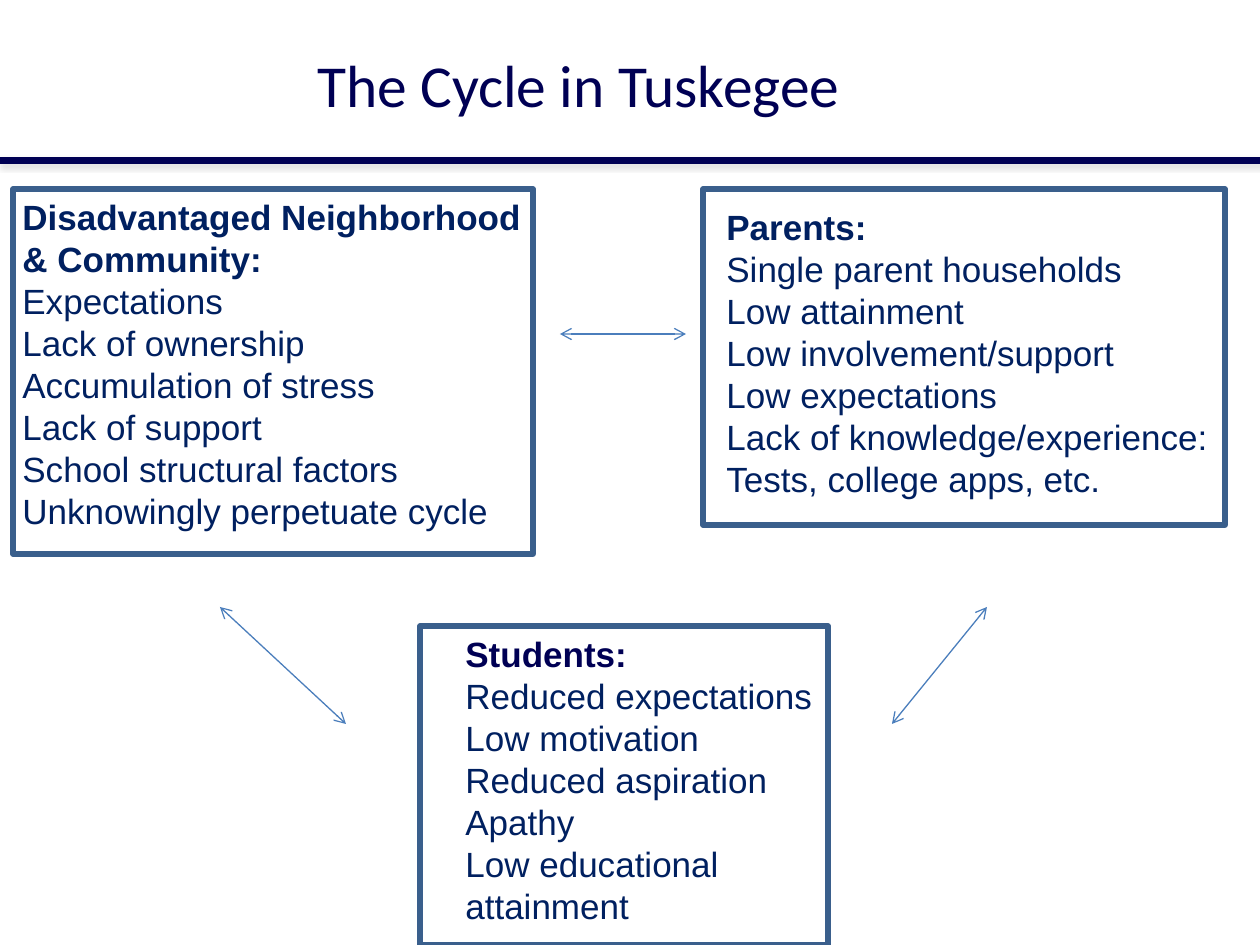
"""Build the slide showing the cycle between community, parents and students."""
from lxml.etree import SubElement
from pptx import Presentation
from pptx.dml.color import RGBColor
from pptx.enum.shapes import MSO_CONNECTOR as Connector, MSO_SHAPE as Shape
from pptx.enum.text import MSO_ANCHOR as Anchor
from pptx.oxml.ns import qn
from pptx.util import Emu, Pt

NAVY = RGBColor(0x00, 0x00, 0x54)
INK = RGBColor(0x00, 0x20, 0x60)
FRAME = RGBColor(0x3A, 0x5F, 0x8C)
ARROW = RGBColor(0x4B, 0x7E, 0xBC)
EMU_PER_PX = 914400 / 126

COMMUNITY = [
    "Disadvantaged Neighborhood", "& Community:", "Expectations",
    "Lack of ownership", "Accumulation of stress", "Lack of support",
    "School structural factors", "Unknowingly perpetuate cycle",
]
PARENTS = [
    "Parents:", "Single parent households", "Low attainment",
    "Low involvement/support", "Low expectations",
    "Lack of knowledge/experience:", "Tests, college apps, etc.",
]
STUDENTS = [
    "Students:", "Reduced expectations", "Low motivation",
    "Reduced aspiration", "Apathy", "Low educational", "attainment",
]


def px(*lengths):
    return [Emu(round(length * EMU_PER_PX)) for length in lengths]


def add_rule(page):
    rule = page.shapes.add_shape(Shape.RECTANGLE, *px(0, 157, 1270, 7))
    rule.fill.solid()
    rule.fill.fore_color.rgb = NAVY
    rule.line.fill.background()
    rule.shadow.inherit = False
    effects = rule.element.spPr.find(qn("a:effectLst"))
    shadow = SubElement(effects, qn("a:outerShdw"), blurRad=str(Pt(3.1)),
                        dist=str(Pt(1.8)), dir="5400000", rotWithShape="0")
    color = SubElement(shadow, qn("a:srgbClr"), val="808080")
    SubElement(color, qn("a:alpha"), val="35000")


def add_title(page, text):
    box = page.shapes.add_textbox(*px(305, 10, 945, 147))
    frame = box.text_frame
    frame.word_wrap = True
    frame.vertical_anchor = Anchor.MIDDLE
    frame.text = text
    font = frame.paragraphs[0].runs[0].font
    font.name, font.size, font.color.rgb = "Calibri", Pt(34), NAVY


def add_list(page, bounds, lines, heading_count=1, heading_color=INK, wrap=False):
    box = page.shapes.add_textbox(*px(*bounds))
    frame = box.text_frame
    frame.word_wrap = wrap
    frame.text = "\n".join(lines)
    for index, para in enumerate(frame.paragraphs):
        is_heading = index < heading_count
        para.line_spacing = Pt(24)
        font = para.runs[0].font
        font.name, font.size, font.bold = "Arial", Pt(20), is_heading
        font.color.rgb = heading_color if is_heading else INK


def add_frame(page, bounds):
    frame = page.shapes.add_shape(Shape.RECTANGLE, *px(*bounds))
    frame.fill.background()
    frame.line.color.rgb = FRAME
    frame.line.width = Pt(3)
    frame.shadow.inherit = False


def add_arrow(page, ends):
    arrow = page.shapes.add_connector(Connector.STRAIGHT, *px(*ends))
    arrow.line.color.rgb = ARROW
    arrow.line.width = Pt(0.75)
    outline = arrow.line._get_or_add_ln()
    for end in ("a:headEnd", "a:tailEnd"):
        SubElement(outline, qn(end), type="arrow")
    SubElement(arrow.element.spPr, qn("a:effectLst"))


def main():
    deck = Presentation()
    deck.slide_width, deck.slide_height = px(1260, 945)
    page = deck.slides.add_slide(deck.slide_layouts[6])
    add_rule(page)
    add_title(page, "The Cycle in Tuskegee")
    add_list(page, (10, 189, 607, 496), COMMUNITY, heading_count=2, wrap=True)
    add_list(page, (714, 199, 510, 352), PARENTS)
    add_list(page, (453, 626, 377, 310), STUDENTS, heading_color=NAVY)
    for bounds in ((703, 189, 522, 336), (13, 189, 520, 365), (420, 626, 408, 319)):
        add_frame(page, bounds)
    for ends in ((220, 607, 346, 724), (987, 607, 892, 724), (560, 334, 686, 334)):
        add_arrow(page, ends)
    deck.save("out.pptx")


if __name__ == "__main__":
    main()
